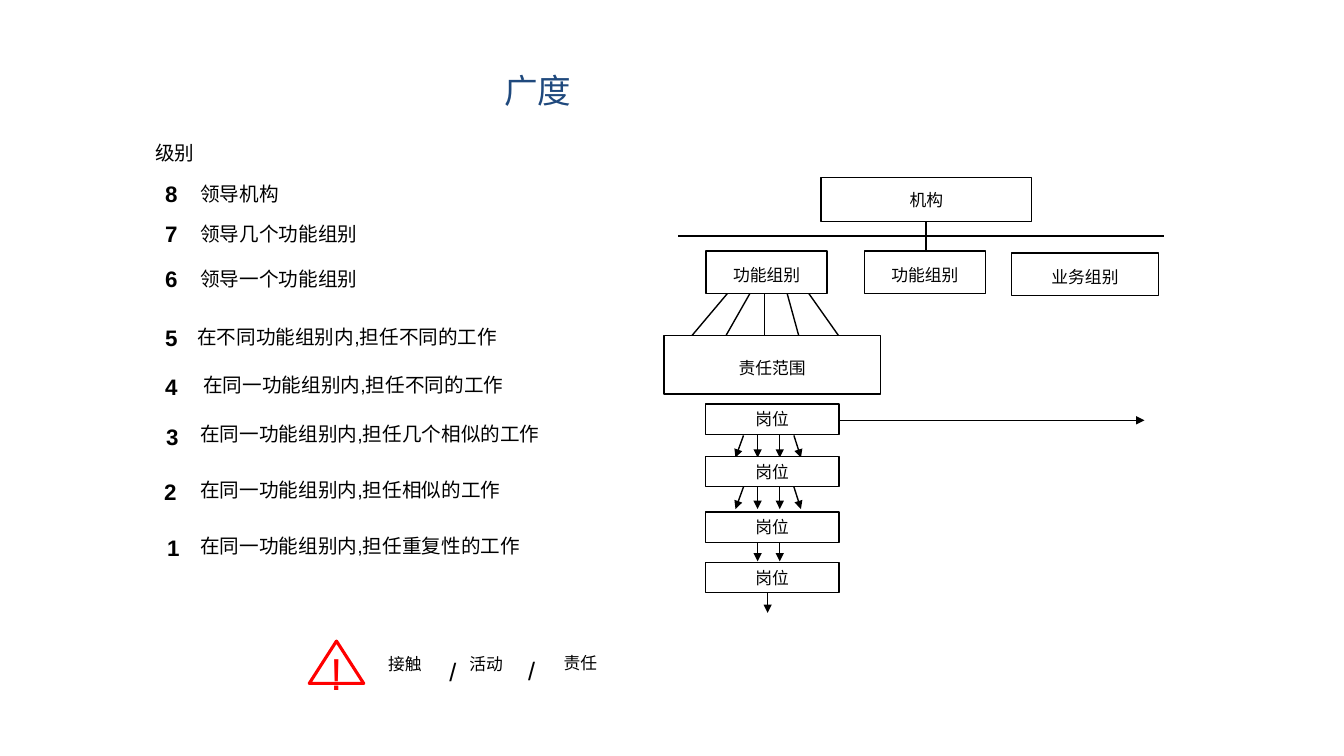
from dataclasses import dataclass

import pptx
import pptx.util
import pptx.dml.color
import pptx.enum.shapes
import pptx.enum.text
import pptx.oxml.ns
from lxml import etree

Inches = pptx.util.Inches
Pt = pptx.util.Pt
RGBColor = pptx.dml.color.RGBColor
MSO_SHAPE = pptx.enum.shapes.MSO_SHAPE
PP_ALIGN = pptx.enum.text.PP_ALIGN
qn = pptx.oxml.ns.qn

BLACK = RGBColor(0x00, 0x00, 0x00)
WHITE = RGBColor(0xFF, 0xFF, 0xFF)
RED = RGBColor(0xFF, 0x00, 0x00)
NAVY = RGBColor(0x1F, 0x49, 0x7D)


@dataclass
class Label:
    text: str
    left: float
    top: float
    width: float
    height: float
    size: float
    bold: bool = False
    align: PP_ALIGN = PP_ALIGN.CENTER
    color: RGBColor = BLACK
    font: str = "Arial"


@dataclass
class Box:
    text: str
    left: float
    top: float
    width: float
    height: float
    inset_top: float = 0.05
    preset: MSO_SHAPE = MSO_SHAPE.RECTANGLE
    color: RGBColor = BLACK
    line_width: float = 1
    size: float = 12


@dataclass
class Line:
    x1: float
    y1: float
    x2: float
    y2: float
    arrow: bool = False


@dataclass
class Level:
    number: str
    text: str
    number_left: float
    number_top: float
    text_left: float
    text_top: float


def write(tf, text: str, size: float, color: RGBColor, bold: bool = False,
          align: PP_ALIGN = PP_ALIGN.CENTER, font: str = "Arial") -> None:
    tf.vertical_anchor = pptx.enum.text.MSO_ANCHOR.MIDDLE
    p = tf.paragraphs[0]
    p.text = text
    p.alignment = align
    p.font.size = Pt(size)
    p.font.bold = bold
    p.font.name = font
    p.font.color.rgb = color


def add_label(s, label: Label) -> None:
    sp = s.shapes.add_textbox(Inches(label.left), Inches(label.top),
                              Inches(label.width), Inches(label.height))
    sp.text_frame.word_wrap = label.align == PP_ALIGN.LEFT
    write(sp.text_frame, label.text, label.size, label.color, label.bold,
          label.align, label.font)


def add_box(s, box: Box) -> None:
    sp = s.shapes.add_shape(box.preset, Inches(box.left), Inches(box.top),
                            Inches(box.width), Inches(box.height))
    sp.shadow.inherit = False
    sp.fill.solid()
    sp.fill.fore_color.rgb = WHITE
    sp.line.color.rgb = box.color
    sp.line.width = Pt(box.line_width)
    tf = sp.text_frame
    tf.word_wrap = False
    tf.margin_top = Inches(box.inset_top)
    write(tf, box.text, box.size, box.color)


def add_line(s, line: Line) -> None:
    sp = s.shapes.add_connector(
        pptx.enum.shapes.MSO_CONNECTOR.STRAIGHT,
        Inches(line.x1), Inches(line.y1), Inches(line.x2), Inches(line.y2))
    sp.line.color.rgb = BLACK
    sp.line.width = Pt(1)
    if line.arrow:
        etree.SubElement(sp.line._get_or_add_ln(), qn("a:tailEnd"), type="triangle")
    etree.SubElement(sp._element.spPr, qn("a:effectLst"))


LEVELS = [
    Level("8", "领导机构", 1.53, 1.74, 1.89, 1.76),
    Level("7", "领导几个功能组别", 1.53, 2.13, 1.89, 2.15),
    Level("6", "领导一个功能组别", 1.53, 2.58, 1.89, 2.6),
    Level("5", "在不同功能组别内,担任不同的工作", 1.53, 3.16, 1.86, 3.18),
    Level("4", "在同一功能组别内,担任不同的工作", 1.53, 3.65, 1.92, 3.65),
    Level("3", "在同一功能组别内,担任几个相似的工作", 1.54, 4.15, 1.89, 4.14),
    Level("2", "在同一功能组别内,担任相似的工作", 1.52, 4.69, 1.89, 4.69),
    Level("1", "在同一功能组别内,担任重复性的工作", 1.55, 5.25, 1.89, 5.25),
]
LABELS = [
    Label("广度", 3.44, 0.36, 3.8, 1.06, 24, color=NAVY, font="Noto Sans CJK SC"),
    Label("级别", 1.17, 1.37, 1.13, 0.29, 14),
    Label("接触", 3.75, 6.44, 0.54, 0.3, 12),
    Label("/", 4.38, 6.46, 0.18, 0.4, 18),
    Label("活动", 4.53, 6.44, 0.59, 0.3, 12),
    Label("/", 5.16, 6.45, 0.18, 0.4, 18),
    Label("责任", 5.49, 6.43, 0.54, 0.3, 12),
]
BOXES = [
    Box("机构", 8.15, 1.76, 2.09, 0.44),
    Box("功能组别", 7.01, 2.49, 1.2, 0.42, 0.11),
    Box("功能组别", 8.58, 2.49, 1.2, 0.42, 0.11),
    Box("业务组别", 10.04, 2.51, 1.46, 0.42, 0.11),
    Box("责任范围", 6.59, 3.33, 2.15, 0.58, 0.11),
    *[Box("岗位", 7, top, 1.33, 0.3) for top in (4.01, 4.53, 5.08, 5.58)],
    Box("!", 3.07, 6.36, 0.54, 0.42, preset=MSO_SHAPE.ISOSCELES_TRIANGLE,
        color=RED, line_width=2.25, size=32),
]
FAN = [(7.23, 6.8), (7.45, 7.16), (7.59, 7.59), (7.81, 7.95), (8.02, 8.38)]
STRAIGHT = [(7.52, 7.52), (7.74, 7.74)]
SPREAD = [(7.38, 7.3), *STRAIGHT, (7.88, 7.95)]
JOB_ARROWS = [(4.32, SPREAD), (4.83, SPREAD), (5.35, STRAIGHT), (5.86, [(7.62, 7.62)])]
LINES = [
    Line(6.73, 2.34, 11.55, 2.34),
    Line(9.19, 2.19, 9.19, 2.49),
    Line(8.32, 4.17, 11.36, 4.17, True),
    *[Line(x1, 2.9, x2, 3.41) for x1, x2 in FAN],
    *[Line(x1, top, x2, top + 0.22, True)
      for top, arrows in JOB_ARROWS for x1, x2 in arrows],
]


def main() -> None:
    prs = pptx.Presentation()
    prs.slide_width = Inches(13.34)
    prs.slide_height = Inches(7.5)
    s = prs.slides.add_slide(prs.slide_layouts[6])
    for label in LABELS:
        add_label(s, label)
    for level in LEVELS:
        add_label(s, Label(level.number, level.number_left, level.number_top,
                           0.34, 0.37, 16, bold=True))
        add_label(s, Label(level.text, level.text_left, level.text_top,
                           4.6, 0.33, 14, align=PP_ALIGN.LEFT))
    for line in LINES:
        add_line(s, line)
    for box in BOXES:
        add_box(s, box)
    prs.save("out.pptx")


if __name__ == "__main__":
    main()
